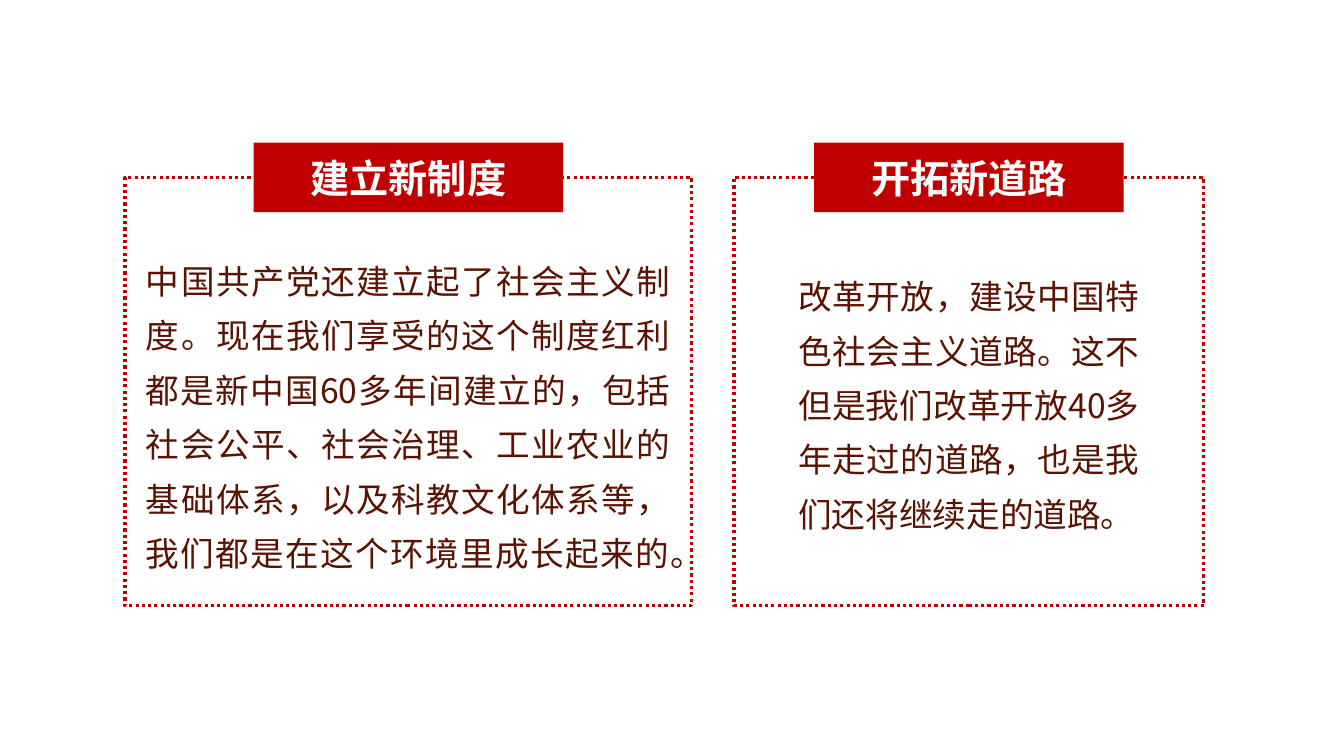
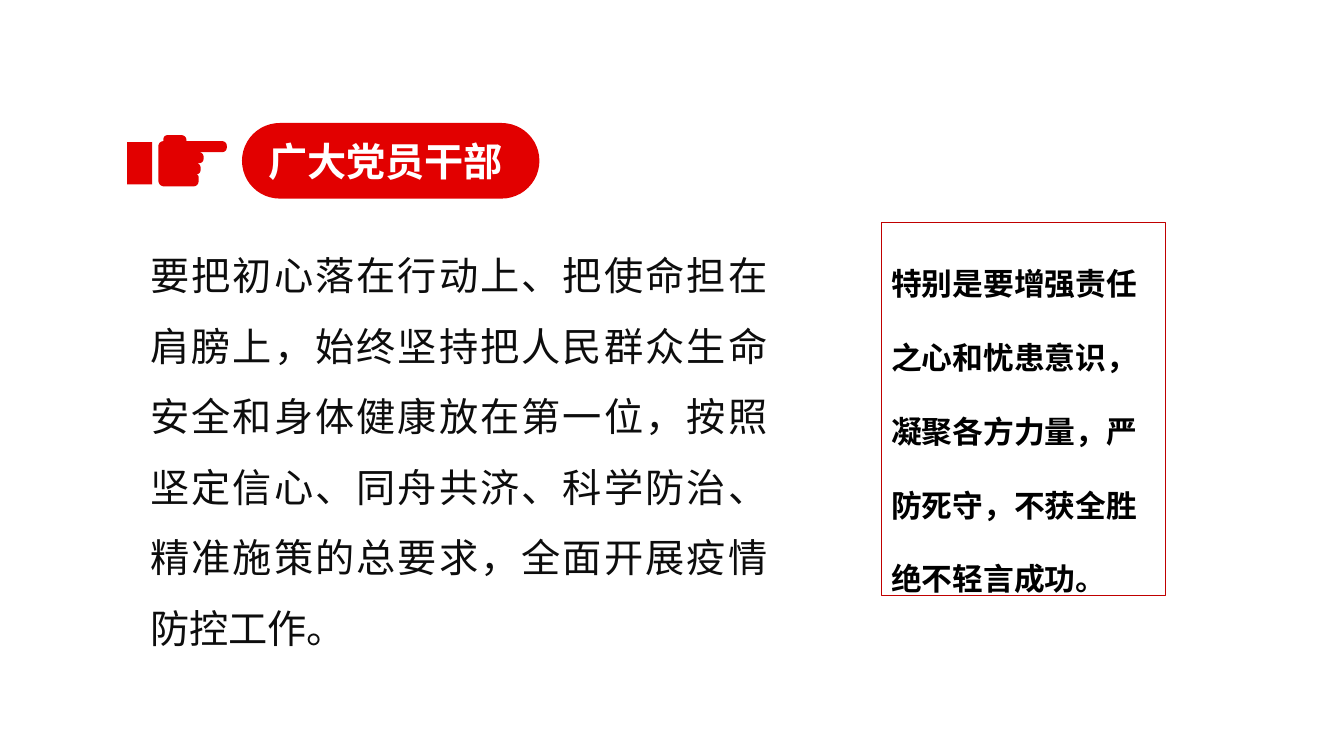
from lxml import etree
from pptx import Presentation
from pptx.dml.color import RGBColor
from pptx.enum import dml, lang, shapes, text
from pptx.oxml import ns
from pptx.util import Inches, Pt

FONT = "Noto Sans CJK SC"
COLORS = {"deep": "C00000", "bright": "E20000", "brown": "591300",
          "ink": "0D0D0D", "black": "000000", "white": "FFFFFF"}
ALIGN, ANCHOR = text.PP_ALIGN, text.MSO_ANCHOR
GROW = text.MSO_AUTO_SIZE.SHAPE_TO_FIT_TEXT
FIXED = text.MSO_AUTO_SIZE.NONE
RECT = shapes.MSO_SHAPE.RECTANGLE
PILL = shapes.MSO_SHAPE.ROUNDED_RECTANGLE

# Text styles
HEAD = {"size": 28, "color": "white", "bold": True}
BODY = {"size": 24, "color": "brown", "spacing": 1.35}
LEAD = {"size": 28, "color": "ink", "spacing": 1.5}
NOTE = {"size": 22, "color": "black", "bold": True, "spacing": 2.0}

# Corners of the pointing hand: x, y and rounding, in hundredths of an inch
HAND = [(5, 6, 0), (5, 0, 5), (28, 0, 6), (28, 6, 0), (68, 6, 5.5),
        (68, 17, 5.5), (39, 17, 0), (45, 17, 5.5), (45, 28, 5.5),
        (37, 28, 0), (42, 28, 5), (42, 39, 5), (37, 39, 0),
        (40, 39, 3), (40, 51, 6), (0, 51, 7), (0, 6, 6)]


def rgb(name):
    return RGBColor.from_string(COLORS[name])


def write(shape, words, style, align=ALIGN.LEFT, anchor=ANCHOR.TOP,
          wrap=True, fit=GROW):
    frame = shape.text_frame
    for key, value in {"word_wrap": wrap, "auto_size": fit,
                       "vertical_anchor": anchor}.items():
        setattr(frame, key, value)
    para = frame.paragraphs[0]
    para.alignment = align
    para.line_spacing = style.get("spacing", 1.0)
    run = para.add_run()
    run.text = words
    look = {"size": Pt(style["size"]), "bold": style.get("bold", False),
            "name": FONT, "language_id": lang.MSO_LANGUAGE_ID.SIMPLIFIED_CHINESE}
    for key, value in look.items():
        setattr(run.font, key, value)
    run.font.color.rgb = rgb(style["color"])
    props = run._r.get_or_add_rPr()
    etree.SubElement(props, ns.qn("a:ea")).set("typeface", FONT)


def paint(shape, fill=None, line=None, width=1, dash=None):
    shape.shadow.inherit = False
    if fill:
        shape.fill.solid()
        shape.fill.fore_color.rgb = rgb(fill)
    else:
        shape.fill.background()
    if line:
        shape.line.color.rgb = rgb(line)
        shape.line.width = Pt(width)
        shape.line.dash_style = dash
    else:
        shape.line.fill.background()
    return shape


def block(slide, box, kind=RECT, **look):
    shape = slide.shapes.add_shape(kind, *map(Inches, box))
    return paint(shape, **look)


def passage(slide, box, words, style):
    shape = slide.shapes.add_textbox(*map(Inches, box))
    write(shape, words, style, align=ALIGN.JUSTIFY)


def panel(slide, box, head, words, inset, shift):
    """Dotted frame, with a heading on its top edge and a passage inside."""
    left, top, width, height = box
    block(slide, box, line="deep", width=2.25,
          dash=dml.MSO_LINE.ROUND_DOT)
    side, drop, tall = inset
    passage(slide, (left + side, top + drop, width - 2 * side, tall),
            words, BODY)
    wide, high = 3.07, 0.69
    label = block(slide, (left + (width - wide) / 2 + shift,
                          top - high / 2, wide, high), fill="deep")
    write(label, head, HEAD, ALIGN.CENTER, ANCHOR.MIDDLE, fit=FIXED)


def outline(corners, steps=8):
    """Points along a polygon whose corners are rounded."""
    points = []
    for i, (x, y, r) in enumerate(corners):
        if not r:
            points.append((x, y))
            continue
        ends = []
        for px, py, _ in (corners[i - 1], corners[(i + 1) % len(corners)]):
            part = r / max(abs(px - x), abs(py - y))
            ends.append((x + (px - x) * part, y + (py - y) * part))
        (ax, ay), (bx, by) = ends
        for t in (n / steps for n in range(steps + 1)):
            a, m, b = (1 - t) ** 2, 2 * t * (1 - t), t * t
            points.append((a * ax + m * x + b * bx, a * ay + m * y + b * by))
    return points


def pointer(slide, left, top):
    """Hand and cuff pointing right."""
    points = [(Inches(left + 0.31 + x / 100), Inches(top + y / 100))
              for x, y in outline(HAND)]
    path = slide.shapes.build_freeform(*points[0])
    path.add_line_segments(points[1:], close=True)
    paint(path.convert_to_shape(), fill="bright")
    block(slide, (left, top + 0.07, 0.25, 0.42), fill="bright")


def banner(slide, box, words):
    """Pill with the slide title on it."""
    left, top, width, height = box
    pill = block(slide, box, PILL, fill="bright")
    pill.adjustments[0] = 0.5
    title = slide.shapes.title
    spot = {"left": left + 0.16, "top": top + 0.09,
            "width": 2.62, "height": 0.57}
    for key, value in spot.items():
        setattr(title, key, Inches(value))
    write(title, words, HEAD, wrap=False)
    pill.element.addnext(title.element)


def systems(deck):
    slide = deck.slides.add_slide(deck.slide_layouts[6])
    panel(slide, (1.24, 1.76, 5.62, 4.25), "建立新制度",
          "中国共产党还建立起了社会主义制度。现在我们享受的这个制度红利都是"
          "新中国60多年间建立的，包括社会公平、社会治理、工业农业的基础体系，"
          "以及科教文化体系等，我们都是在这个环境里成长起来的。",
          inset=(0.11, 0.64, 3.33), shift=0)
    panel(slide, (7.28, 1.76, 4.66, 4.25), "开拓新道路",
          "改革开放，建设中国特色社会主义道路。这不但是我们改革开放40多年"
          "走过的道路，也是我们还将继续走的道路。",
          inset=(0.54, 0.79, 2.78), shift=0)


def duties(deck):
    slide = deck.slides.add_slide(deck.slide_layouts[5])
    pointer(slide, 1.26, 1.34)
    banner(slide, (2.4, 1.22, 2.95, 0.75), "广大党员干部")
    passage(slide, (1.39, 2.21, 6.32, 4.27),
            "要把初心落在行动上、把使命担在肩膀上，始终坚持把人民群众生命安全和"
            "身体健康放在第一位，按照坚定信心、同舟共济、科学防治、精准施策的"
            "总要求，全面开展疫情防控工作。", LEAD)
    note = block(slide, (8.74, 2.21, 2.82, 3.7), line="deep", width=0.75)
    write(note, "特别是要增强责任之心和忧患意识，凝聚各方力量，严防死守，"
                "不获全胜绝不轻言成功。", NOTE)


def main():
    deck = Presentation()
    deck.slide_width, deck.slide_height = Inches(13.33), Inches(7.5)
    systems(deck)
    duties(deck)
    deck.save("out.pptx")


if __name__ == "__main__":
    main()
